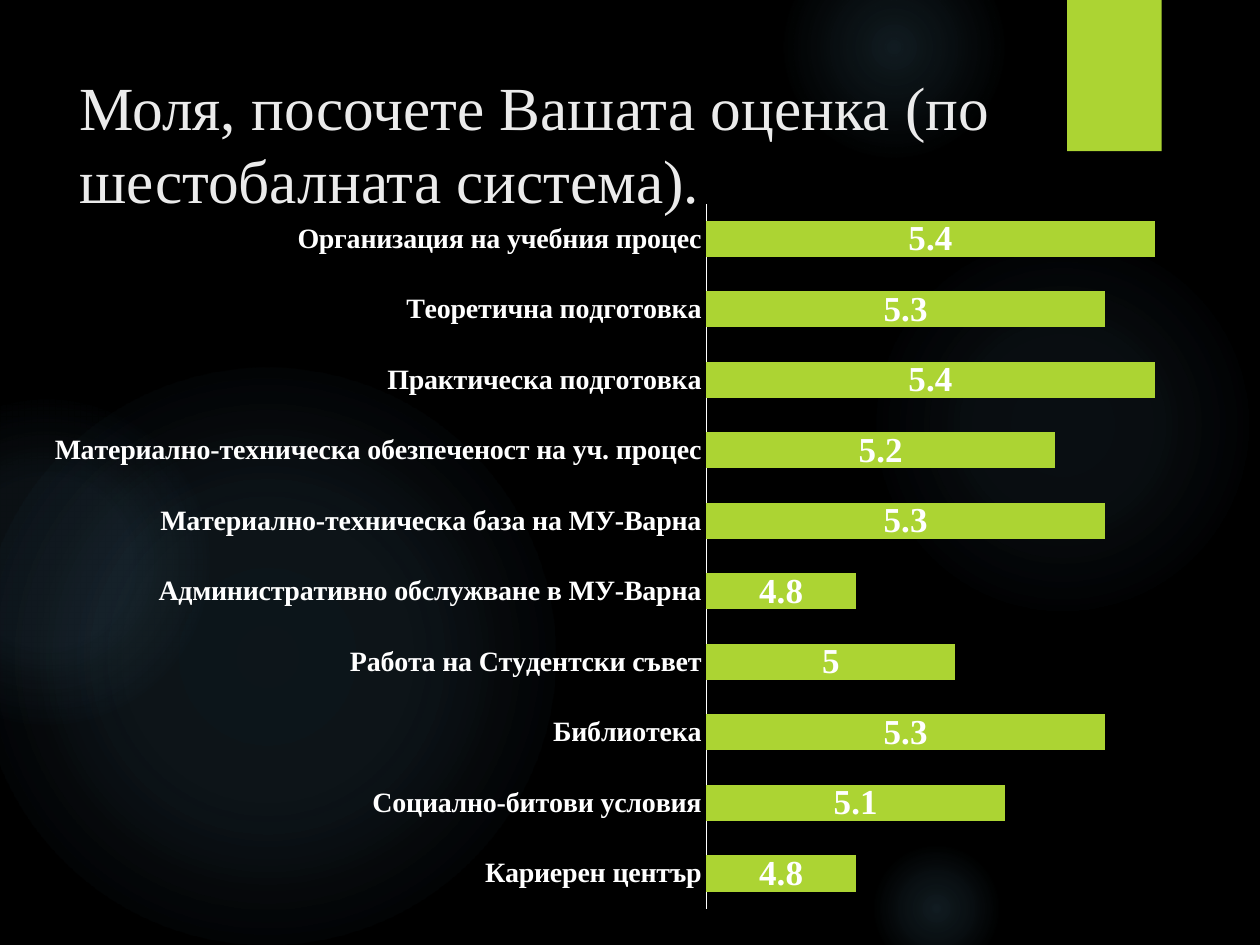
from lxml import etree
from pptx import Presentation
from pptx.chart.data import CategoryChartData
from pptx.dml.color import RGBColor
from pptx.enum.chart import XL_CHART_TYPE as CHART, XL_LABEL_POSITION as LABEL, XL_TICK_MARK as TICK
from pptx.enum.shapes import MSO_SHAPE as SHAPE
from pptx.enum.text import MSO_ANCHOR as ANCHOR
from pptx.oxml import parse_xml
from pptx.oxml.ns import nsdecls, qn
from pptx.util import Inches, Pt

GREEN = "ACD433"
WHITE = "FFFFFF"
SERIF = "Times New Roman"


def rgb(color):
    return RGBColor.from_string(color)


def set_font(font, size, color, bold=False, name=SERIF):
    font.size, font.bold, font.name = Pt(size), bold, name
    font.color.rgb = rgb(color)


prs = Presentation()
prs.slide_width, prs.slide_height = Inches(10), Inches(7.5)
s = prs.slides.add_slide(prs.slide_layouts[6])
s.background.fill.solid()
s.background.fill.fore_color.rgb = rgb("000000")

# Glowing circles: left, top, diameter, then (position %, opacity %) stops
glows = [
    (6.89, 1.83, 3.08, [(0, 7), (36, 6), (69, 0)]),
    (6.22, -0.5, 1.75, [(0, 14), (36, 7), (73, 0)]),
    (6.89, 6.67, 1.08, [(0, 14), (36, 7), (66, 0)]),
    (-0.17, 2.92, 4.58, [(0, 11), (36, 10), (75, 0)]),
    (-0.92, 3.17, 2.58, [(0, 8), (36, 8), (72, 0)]),
]
for left, top, size, stops in glows:
    sp = s.shapes.add_shape(SHAPE.OVAL, Inches(left), Inches(top), Inches(size), Inches(size))
    sp.shadow.inherit = False
    sp.line.fill.background()
    gs = "".join(
        f'<a:gs pos="{pos * 1000}"><a:srgbClr val="7AC4F0"><a:alpha val="{alpha * 1000}"/></a:srgbClr></a:gs>'
        for pos, alpha in stops)
    sp._element.spPr.find(qn("a:prstGeom")).addnext(parse_xml(
        f'<a:gradFill {nsdecls("a")} rotWithShape="1"><a:gsLst>{gs}</a:gsLst><a:path path="circle">'
        '<a:fillToRect l="50000" t="50000" r="50000" b="50000"/></a:path></a:gradFill>'))

# Green tab with a soft shadow
sp = s.shapes.add_shape(SHAPE.RECTANGLE, Inches(8.47), 0, Inches(0.75), Inches(1.2))
sp.shadow.inherit = False
sp.fill.solid()
sp.fill.fore_color.rgb = rgb(GREEN)
sp.line.fill.background()
sp._element.spPr.find(qn("a:effectLst")).append(parse_xml(
    f'<a:outerShdw {nsdecls("a")} blurRad="{Pt(3)}" dist="{Pt(2)}" dir="5400000" rotWithShape="0">'
    '<a:srgbClr val="000000"><a:alpha val="45000"/></a:srgbClr></a:outerShdw>'))

# Title
tf = s.shapes.add_textbox(Inches(0.53), Inches(0.5), Inches(7.72), Inches(1.53)).text_frame
tf.word_wrap = True
tf.vertical_anchor = ANCHOR.TOP
tf.text = "Моля, посочете Вашата оценка (по шестобалната система)."
set_font(tf.paragraphs[0].runs[0].font, 35, "EBEBEB")

# Ratings chart, listed from the bottom bar up
ratings = [
    ("Кариерен център", 4.8),
    ("Социално-битови условия", 5.1),
    ("Библиотека", 5.3),
    ("Работа на Студентски съвет", 5),
    ("Административно обслужване в МУ-Варна", 4.8),
    ("Материално-техническа база на МУ-Варна", 5.3),
    ("Материално-техническа обезпеченост на уч. процес", 5.2),
    ("Практическа подготовка", 5.4),
    ("Теоретична подготовка", 5.3),
    ("Организация на учебния процес", 5.4),
]
data = CategoryChartData()
data.categories = [name for name, _ in ratings]
data.add_series("Series 1", [value for _, value in ratings])
chart = s.shapes.add_chart(CHART.BAR_STACKED, Inches(0.25), Inches(1.5),
                           Inches(9.5), Inches(5.83), data).chart
chart.has_legend = False
chart.has_title = False
set_font(chart.font, 18, WHITE, name="League Spartan")

plot = chart.plots[0]
plot.gap_width, plot.overlap = 95, 100
plot.vary_by_categories = False
series = plot.series[0]
series.format.fill.solid()
series.format.fill.fore_color.rgb = rgb(GREEN)
labels = series.data_labels
labels.show_value = True
labels.position = LABEL.CENTER
labels.number_format, labels.number_format_is_linked = "General", False
set_font(labels.font, 20, WHITE, bold=True)

axis = chart.category_axis
axis.major_tick_mark = axis.minor_tick_mark = TICK.NONE
axis.format.line.color.rgb = rgb(WHITE)
axis.format.line.width = Pt(0.75)
set_font(axis.tick_labels.font, 16, WHITE, bold=True)

axis = chart.value_axis
axis.minimum_scale, axis.maximum_scale = 4.5, 5.5
axis.has_major_gridlines = False
axis.visible = False

# Fixed inner plot area, so the long category names stay on one line
area = chart._chartSpace.chart.plotArea
for old in area.findall(qn("c:layout")):
    area.remove(old)
layout = etree.Element(qn("c:layout"))
manual = etree.SubElement(layout, qn("c:manualLayout"))
for tag, val in [("layoutTarget", "inner"), ("xMode", "edge"), ("yMode", "edge"),
                 ("x", 0.564), ("y", 0.02), ("w", 0.416), ("h", 0.96)]:
    etree.SubElement(manual, qn(f"c:{tag}")).set("val", str(val))
area.insert(0, layout)

prs.save("out.pptx")
